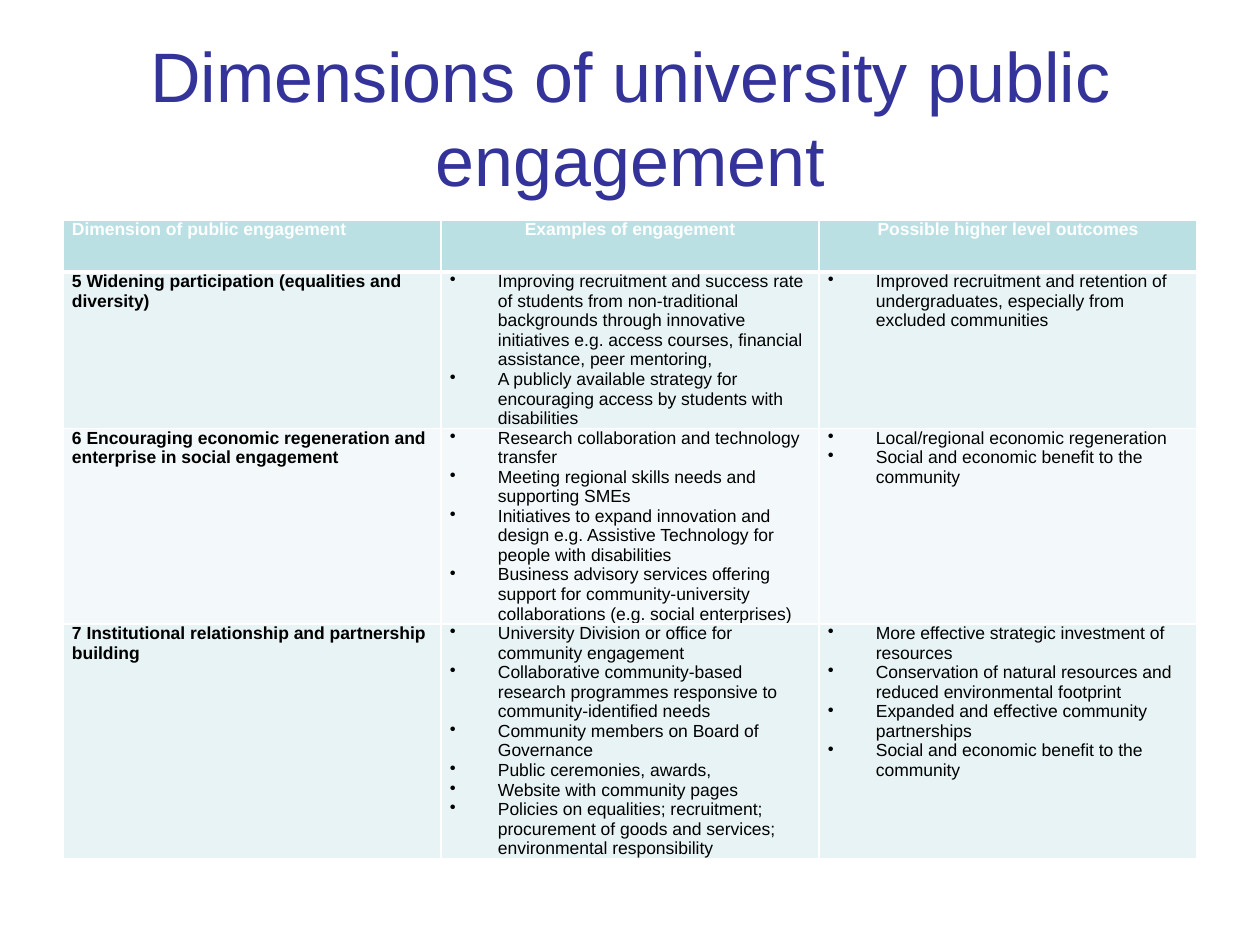
import pptx
import pptx.util
import pptx.dml.color
import pptx.enum.text
import pptx.oxml
import pptx.oxml.ns
import lxml.etree

RGB = pptx.dml.color.RGBColor
ALIGN = pptx.enum.text.PP_ALIGN
NAVY = RGB(0x33, 0x33, 0x99)
TEAL = RGB(0xBB, 0xE0, 0xE3)
TINT = RGB(0xE7, 0xF3, 0xF4)
PALE = RGB(0xF3, 0xF9, 0xFA)
WHITE = RGB(0xFF, 0xFF, 0xFF)
BLACK = RGB(0, 0, 0)
FONT = "Arial"
SCALE = 914400 // 126

HEADS = ["Dimension of public engagement", "Examples of engagement",
         "Possible higher level outcomes"]
ROWS = [
    ("5 Widening participation (equalities and diversity)",
     ["Improving recruitment and success rate of students from non-traditional "
      "backgrounds through innovative initiatives e.g. access courses, "
      "financial assistance, peer mentoring,",
      "A publicly available strategy for encouraging access by students with "
      "disabilities"],
     ["Improved recruitment and retention of undergraduates, especially from "
      "excluded communities"]),
    ("6 Encouraging economic regeneration and enterprise in social engagement",
     ["Research collaboration and technology transfer",
      "Meeting regional skills needs and supporting SMEs",
      "Initiatives to expand innovation and design e.g. Assistive Technology "
      "for people with disabilities",
      "Business advisory services offering support for community-university "
      "collaborations (e.g. social enterprises)"],
     ["Local/regional economic regeneration",
      "Social and economic benefit to the community"]),
    ("7 Institutional relationship and partnership building",
     ["University Division or office for community engagement",
      "Collaborative community-based research programmes responsive to "
      "community-identified needs",
      "Community members on Board of Governance",
      "Public ceremonies, awards,",
      "Website with community pages",
      "Policies on equalities; recruitment; procurement of goods and services; "
      "environmental responsibility"],
     ["More effective strategic investment of resources",
      "Conservation of natural resources and reduced environmental footprint",
      "Expanded and effective community partnerships",
      "Social and economic benefit to the community"]),
]


def px(num):
    """Turn whole px into EMU."""
    return pptx.util.Emu(num * SCALE)


def add_run(para, text, size, color, bold=False):
    """Add one styled run to a paragraph."""
    run = para.add_run()
    run.text = text
    run.font.name = FONT
    run.font.size = pptx.util.Pt(size)
    run.font.bold = bold
    run.font.color.rgb = color


def add_dot(para):
    """Give a paragraph a bullet with a hanging indent."""
    props = para._p.get_or_add_pPr()
    props.set("marL", str(px(48)))
    props.set("indent", str(-px(48)))
    mark = lxml.etree.SubElement(props, pptx.oxml.ns.qn("a:buChar"))
    mark.set("char", "•")


def add_edge(cell, base):
    """Draw white borders round a cell, with the given bottom width in points."""
    props = cell._tc.get_or_add_tcPr()
    widths = [("L", 1), ("R", 1), ("T", 1), ("B", base)]
    for spot, (side, width) in enumerate(widths):
        line = pptx.oxml.parse_xml(
            f'<a:ln{side} {pptx.oxml.ns.nsdecls("a")} w="{pptx.util.Pt(width)}">'
            f'<a:solidFill><a:srgbClr val="{WHITE}"/></a:solidFill></a:ln{side}>')
        props.insert(spot, line)


def fill_cell(cell, items, fill, color=BLACK, bold=False, dots=False,
              align=ALIGN.LEFT, base=1):
    """Style a cell and write its paragraphs."""
    cell.fill.solid()
    cell.fill.fore_color.rgb = fill
    cell.margin_left = cell.margin_right = px(9)
    cell.margin_top = cell.margin_bottom = 0
    add_edge(cell, base)
    frame = cell.text_frame
    for num, text in enumerate(items):
        para = frame.add_paragraph() if num else frame.paragraphs[0]
        para.alignment = align
        if dots:
            add_dot(para)
        add_run(para, text, 10, color, bold)


def add_title(slide, left, top, width, height):
    """Place the slide title in its box."""
    title = slide.shapes.title
    title.left, title.top = px(left), px(top)
    title.width, title.height = px(width), px(height)
    frame = title.text_frame
    frame.word_wrap = True
    frame.auto_size = pptx.enum.text.MSO_AUTO_SIZE.NONE
    frame.vertical_anchor = pptx.enum.text.MSO_ANCHOR.MIDDLE
    para = frame.paragraphs[0]
    para.alignment = ALIGN.CENTER
    add_run(para, "Dimensions of university public engagement", 40, NAVY)


def add_grid(slide, left, top, width, height):
    """Place the table of dimensions in its box."""
    shape = slide.shapes.add_table(len(ROWS) + 1, len(HEADS), px(left), px(top),
                                   px(width), px(height))
    table = shape.table
    for row in table.rows:
        row.height = px(52)
    shape.height = px(height)
    for col, head in enumerate(HEADS):
        fill_cell(table.cell(0, col), [head], TEAL, WHITE, bold=True, base=3,
                  align=ALIGN.CENTER if col else ALIGN.LEFT)
    for num, (name, *lists) in enumerate(ROWS, 1):
        fill = TINT if num % 2 else PALE
        fill_cell(table.cell(num, 0), [name], fill, bold=True)
        for col, items in enumerate(lists, 1):
            fill_cell(table.cell(num, col), items, fill, dots=True)


def main():
    """Build and save the deck."""
    deck = pptx.Presentation()
    deck.slide_width, deck.slide_height = px(1260), px(945)
    slide = deck.slides.add_slide(deck.slide_layouts[5])
    add_title(slide, 63, 38, 1134, 158)
    add_grid(slide, 63, 220, 1134, 682)
    deck.save("out.pptx")


if __name__ == "__main__":
    main()
